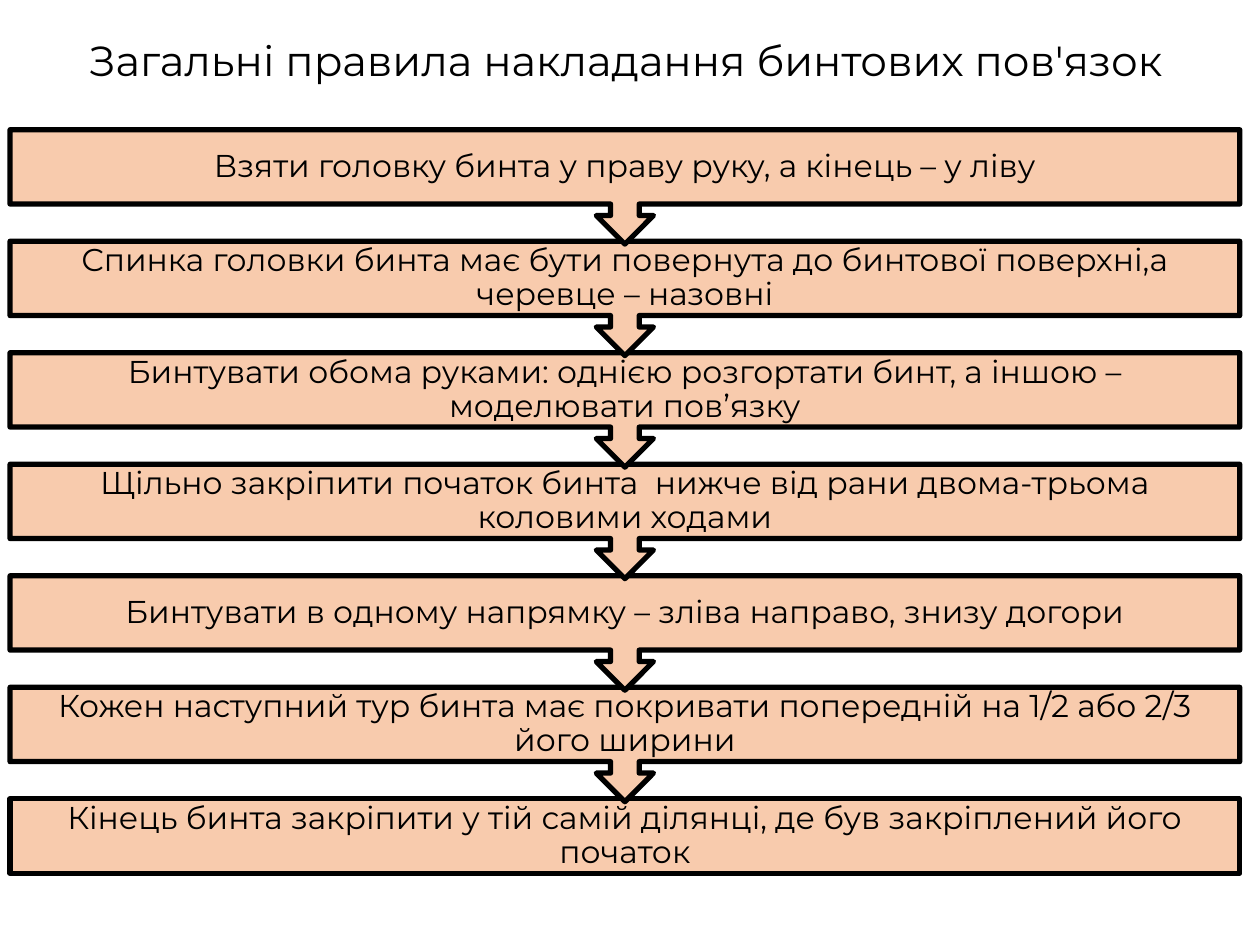
from pptx import Presentation
from pptx.dml.color import RGBColor
from pptx.enum.shapes import MSO_SHAPE
from pptx.enum.text import MSO_ANCHOR, PP_ALIGN
from pptx.util import Inches, Pt

SLIDE_WIDTH, SLIDE_HEIGHT = 10, 7.5
TITLE = "Загальні правила накладання бинтових пов'язок"
STEPS = [
    "Взяти головку бинта у праву руку, а кінець – у ліву",
    "Спинка головки бинта має бути повернута до бинтової поверхні,а черевце – назовні",
    "Бинтувати обома руками: однією розгортати бинт, а іншою – моделювати пов’язку",
    "Щільно закріпити початок бинта  нижче від рани двома-трьома коловими ходами",
    "Бинтувати в одному напрямку – зліва направо, знизу догори",
    "Кожен наступний тур бинта має покривати попередній на 1/2 або 2/3 його ширини",
    "Кінець бинта закріпити у тій самій ділянці, де був закріплений його початок",
]


def color(value):
    return RGBColor.from_string(value)


def write(shape, text, size=18, anchor=MSO_ANCHOR.MIDDLE, inset=0.14,
          line_spacing=0.9, wrap=True):
    frame = shape.text_frame
    frame.text = text
    frame.word_wrap = wrap
    frame.vertical_anchor = anchor
    frame.margin_left = frame.margin_right = Inches(inset)
    frame.margin_top = frame.margin_bottom = Inches(inset)
    paragraph = frame.paragraphs[0]
    paragraph.alignment = PP_ALIGN.CENTER
    paragraph.line_spacing = line_spacing
    font = paragraph.runs[0].font
    font.name = "Montserrat"
    font.size = Pt(size)
    font.color.rgb = color("000000")


def place_title(slide, left, top, width, height):
    title = slide.shapes.title
    title.left, title.top = Inches(left), Inches(top)
    title.width, title.height = Inches(width), Inches(height)
    write(title, TITLE, size=24, anchor=MSO_ANCHOR.TOP, inset=0.05,
          line_spacing=1, wrap=False)


def add_step(slide, kind, text, left, top, width, height):
    shape = slide.shapes.add_shape(
        kind, Inches(left), Inches(top), Inches(width), Inches(height))
    shape.shadow.inherit = False
    shape.fill.solid()
    shape.fill.fore_color.rgb = color("F8CBAD")
    shape.line.color.rgb = color("000000")
    shape.line.width = Pt(3)
    write(shape, text)


def add_process(slide, left, top, width, height):
    """Stack the steps from the last to the first, so each arrow tip lies on top."""
    last = len(STEPS) - 1
    box_height = height * 0.1
    callout_height = box_height / 0.65  # the preset callout's body share
    pitch = (height - box_height) / last
    for index in reversed(range(len(STEPS))):
        is_last = index == last
        add_step(slide,
                 MSO_SHAPE.RECTANGLE if is_last else MSO_SHAPE.DOWN_ARROW_CALLOUT,
                 STEPS[index], left, top + index * pitch, width,
                 box_height if is_last else callout_height)


def main():
    presentation = Presentation()
    presentation.slide_width = Inches(SLIDE_WIDTH)
    presentation.slide_height = Inches(SLIDE_HEIGHT)
    slide = presentation.slides.add_slide(presentation.slide_layouts[5])
    place_title(slide, 0.18, 0.22, 9.57, 0.5)
    add_process(slide, 0.08, 1.03, 9.76, 5.9)
    presentation.save("out.pptx")


if __name__ == "__main__":
    main()
